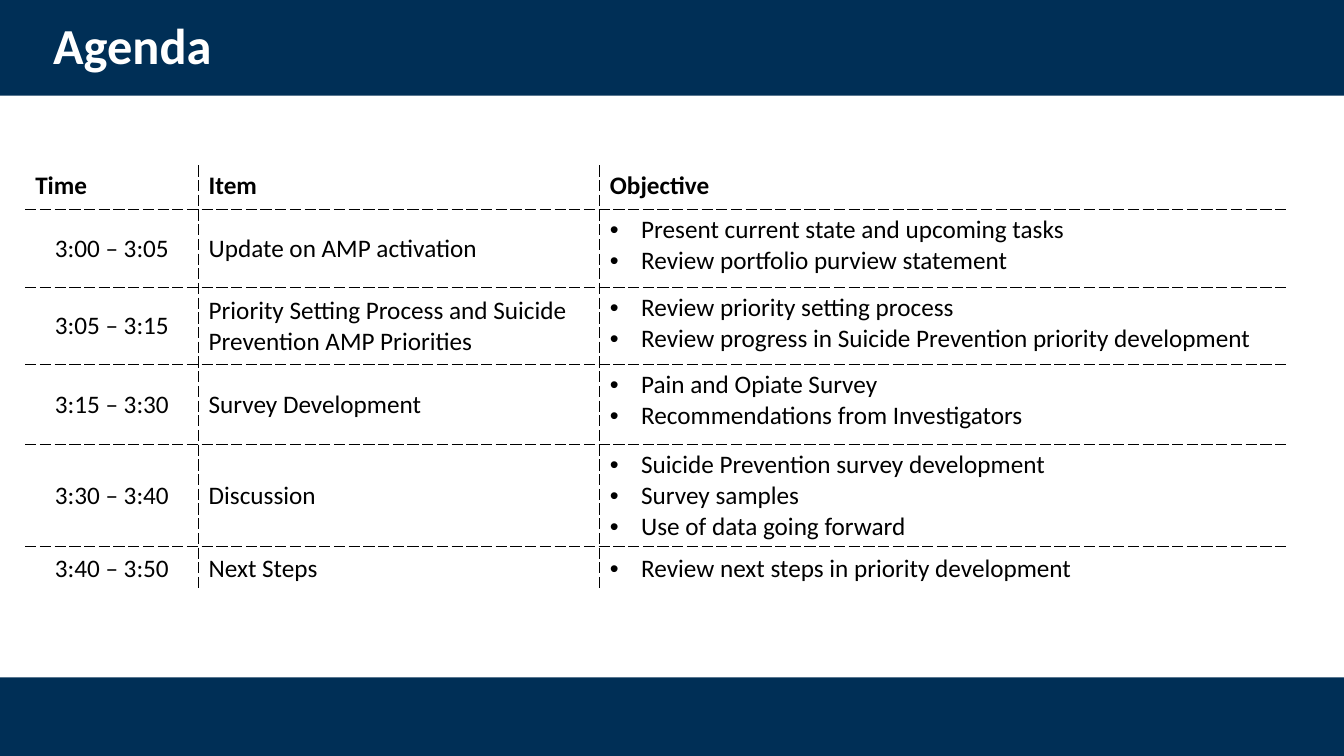
from lxml import etree
from pptx import Presentation
from pptx.dml.color import RGBColor
from pptx.enum.shapes import MSO_SHAPE
from pptx.enum.text import MSO_ANCHOR, PP_ALIGN
from pptx.oxml.ns import qn
from pptx.util import Inches, Pt

RECT = MSO_SHAPE.RECTANGLE
TOP, MIDDLE = MSO_ANCHOR.TOP, MSO_ANCHOR.MIDDLE
LEFT, CENTER = PP_ALIGN.LEFT, PP_ALIGN.CENTER
NAVY, WHITE, BLACK = "002F56", "FFFFFF", "000000"
FONT = "Calibri"
WIDTHS = [1.72, 3.98, 6.81]
HEIGHTS = [0.44, 0.77, 0.77, 0.79, 1.01, 0.44]
HEADS = ["Time", "Item", "Objective"]
AGENDA = [
    ("3:00 – 3:05", "Update on AMP activation",
     ["Present current state and upcoming tasks",
      "Review portfolio purview statement"]),
    ("3:05 – 3:15",
     "Priority Setting Process and Suicide Prevention AMP Priorities",
     ["Review priority setting process",
      "Review progress in Suicide Prevention priority development"]),
    ("3:15 – 3:30", "Survey Development",
     ["Pain and Opiate Survey", "Recommendations from Investigators"]),
    ("3:30 – 3:40", "Discussion",
     ["Suicide Prevention survey development", "Survey samples",
      "Use of data going forward"]),
    ("3:40 – 3:50", "Next Steps",
     ["Review next steps in priority development"]),
]


def color(code):
    """Turn a hex string into a colour."""
    return RGBColor.from_string(code)


def add_bullet(para):
    """Give a paragraph a hanging round bullet."""
    props = para._p.get_or_add_pPr()
    props.set("marL", str(Inches(0.31)))
    props.set("indent", str(-Inches(0.31)))
    etree.SubElement(props, qn("a:buFont"), typeface="Arial")
    etree.SubElement(props, qn("a:buChar"), char="•")


def write(frame, lines, size=18, ink=BLACK, bold=False, align=LEFT,
          bullet=False, spacing=None):
    """Fill a text frame with one paragraph for each line."""
    frame.word_wrap = True
    for index, line in enumerate(lines):
        para = frame.add_paragraph() if index else frame.paragraphs[0]
        if bullet:
            add_bullet(para)
        para.alignment = align
        if spacing:
            para.line_spacing = spacing
        run = para.add_run()
        run.text = line
        run.font.name = FONT
        run.font.size = Pt(size)
        run.font.bold = bold
        run.font.color.rgb = color(ink)


def add_band(slide, top, height):
    """Draw a navy band across the slide."""
    band = slide.shapes.add_shape(
        RECT, 0, Inches(top), Inches(13.33), Inches(height))
    band.shadow.inherit = False
    band.fill.solid()
    band.fill.fore_color.rgb = color(NAVY)
    band.line.fill.background()


def add_title(slide, text):
    """Place the slide title on the top band."""
    box = slide.shapes.add_textbox(
        Inches(0.43), Inches(0.11), Inches(11.5), Inches(0.74))
    box.text_frame.vertical_anchor = MIDDLE
    write(box.text_frame, [text], size=36, ink=WHITE, bold=True, spacing=0.9)


def set_edges(cell, row, col):
    """Dash the inner edges of a cell and hide the outer ones."""
    props = cell._tc.get_or_add_tcPr()
    inner = {"L": col > 0, "R": col < len(WIDTHS) - 1,
             "T": row > 0, "B": row < len(HEIGHTS) - 1}
    for side, shown in inner.items():
        edge = etree.SubElement(props, qn("a:ln" + side), w=str(Pt(1)))
        if shown:
            fill = etree.SubElement(edge, qn("a:solidFill"))
            etree.SubElement(fill, qn("a:srgbClr"), val=BLACK)
            etree.SubElement(edge, qn("a:prstDash"), val="sysDash")
        else:
            etree.SubElement(edge, qn("a:noFill"))


def fill_cell(table, row, col, lines, anchor=MIDDLE, **style):
    """Set the edges, fill and text of one cell."""
    cell = table.cell(row, col)
    set_edges(cell, row, col)
    cell.fill.solid()
    cell.fill.fore_color.rgb = color(WHITE)
    cell.vertical_anchor = anchor
    write(cell.text_frame, lines, **style)


def add_agenda(slide):
    """Build the agenda table."""
    table = slide.shapes.add_table(
        len(HEIGHTS), len(WIDTHS), Inches(0.25), Inches(1.64),
        Inches(sum(WIDTHS)), Inches(sum(HEIGHTS))).table
    table.first_row = table.horz_banding = False
    for column, width in zip(table.columns, WIDTHS):
        column.width = Inches(width)
    for line, height in zip(table.rows, HEIGHTS):
        line.height = Inches(height)
    for col, head in enumerate(HEADS):
        fill_cell(table, 0, col, [head], anchor=TOP, bold=True)
    for row, (time, item, goals) in enumerate(AGENDA, 1):
        fill_cell(table, row, 0, [time], align=CENTER)
        fill_cell(table, row, 1, [item])
        fill_cell(table, row, 2, goals, bullet=True,
                  anchor=TOP if row < 4 else MIDDLE)


def main():
    """Build and save the agenda slide."""
    deck = Presentation()
    deck.slide_width, deck.slide_height = Inches(13.33), Inches(7.5)
    slide = deck.slides.add_slide(deck.slide_layouts[6])
    add_band(slide, 0, 0.95)
    add_band(slide, 6.72, 0.8)
    add_agenda(slide)
    add_title(slide, "Agenda")
    deck.save("out.pptx")


if __name__ == "__main__":
    main()
